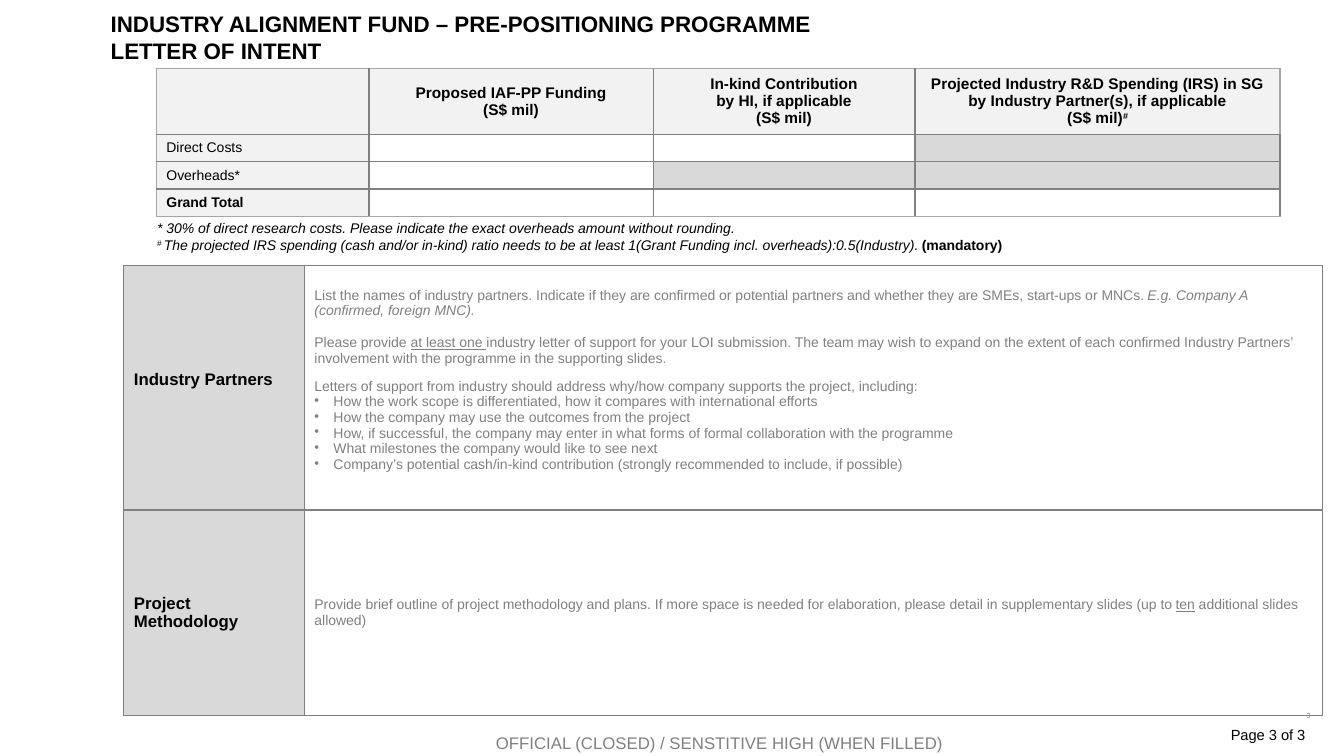
import pptx
import pptx.dml.color
import pptx.enum.text
import pptx.oxml
import pptx.oxml.ns
import pptx.util
from lxml import etree

Cm = pptx.util.Cm
Pt = pptx.util.Pt
RGBColor = pptx.dml.color.RGBColor
ALIGN = pptx.enum.text.PP_ALIGN
MIDDLE = pptx.enum.text.MSO_ANCHOR.MIDDLE
qn = pptx.oxml.ns.qn

BLACK = RGBColor(0x00, 0x00, 0x00)
GUIDE_GREY = RGBColor(0x80, 0x80, 0x80)
EDGE_GREY = RGBColor(0xA6, 0xA6, 0xA6)
NUMBER_GREY = RGBColor(0x8C, 0x8C, 0x8C)
LABEL_FILL = RGBColor(0xD9, 0xD9, 0xD9)
HEADER_FILL = RGBColor(0xF2, 0xF2, 0xF2)

FUNDING_HEADERS = [
    [],
    [["Proposed IAF-PP Funding"], ["(S$ mil)"]],
    [["In-kind Contribution"], ["by HI, if applicable"], ["(S$ mil)"]],
    [["Projected Industry R&D Spending (IRS) in SG by Industry Partner(s), if applicable"],
     ["(S$ mil)", ("#", "^")]],
]
COST_ROWS = ["Direct Costs", "Overheads*", "Grand Total"]
BLOCKED_CELLS = {(1, 3), (2, 2), (2, 3)}

PARTNER_GUIDANCE = [
    ["List the names of industry partners. Indicate if they are confirmed or potential partners "
     "and whether they are SMEs, start-ups or MNCs. ",
     ("E.g. Company A (confirmed, foreign MNC).", "i")],
    ["Please provide ", ("at least one ", "u"),
     "industry letter of support for your LOI submission. The team may wish to expand on the "
     "extent of each confirmed Industry Partners’ involvement with the programme in the "
     "supporting slides."],
    ["Letters of support from industry should address why/how company supports the project, "
     "including:"],
]
LETTER_POINTS = [
    ["How the work scope is differentiated, how it compares with international efforts"],
    ["How the company may use the outcomes from the project"],
    ["How, if successful, the company may enter in what forms of formal collaboration "
     "with the programme"],
    ["What milestones the company would like to see next"],
    ["Company’s potential cash/in-kind contribution (strongly recommended to include, if possible)"],
]
METHODOLOGY_GUIDANCE = [
    ["Provide brief outline of project methodology and plans. If more space is needed for "
     "elaboration, please detail in supplementary slides (up to ", ("ten", "u"),
     " additional slides allowed)"],
]
FOOTNOTES = [
    [("* 30% of direct research costs. Please indicate the exact overheads amount "
      "without rounding.", "i")],
    [("# ", "i^"),
     ("The projected IRS spending (cash and/or in-kind) ratio needs to be at least "
      "1(Grant Funding incl. overheads):0.5(Industry). ", "i"),
     ("(mandatory)", "b")],
]


def add_bullet(paragraph):
    properties = paragraph._p.get_or_add_pPr()
    properties.set("marL", str(Cm(0.48)))
    properties.set("indent", str(-Cm(0.48)))
    etree.SubElement(properties, qn("a:buChar")).set("char", "•")


def write(frame, paragraphs, size, color=BLACK, style="", align=ALIGN.LEFT, gaps=(), bullets_from=99):
    for index, parts in enumerate(paragraphs):
        paragraph = frame.paragraphs[0] if index == 0 else frame.add_paragraph()
        paragraph.alignment = align
        if index < len(gaps) and gaps[index]:
            paragraph.space_before = Pt(gaps[index])
        if index >= bullets_from:
            add_bullet(paragraph)
        for part in parts:
            text, marks = (part, "") if isinstance(part, str) else part
            if text == "\n":
                paragraph.add_line_break()
                continue
            marks += style
            run = paragraph.add_run()
            run.text = text
            font = run.font
            font.name, font.size = "Arial", Pt(size)
            font.color.rgb = color
            font.bold, font.italic, font.underline = "b" in marks, "i" in marks, "u" in marks
            if "^" in marks:
                run._r.get_or_add_rPr().set("baseline", "30000")


def add_text(slide, left, top, width, height, paragraphs, size, **looks):
    box = slide.shapes.add_textbox(Cm(left), Cm(top), Cm(width), Cm(height))
    box.text_frame.word_wrap = True
    write(box.text_frame, paragraphs, size, **looks)
    return box.text_frame


def add_grid(slide, left, top, widths, heights):
    frame = slide.shapes.add_table(len(heights), len(widths), Cm(left), Cm(top),
                                   Cm(sum(widths)), Cm(sum(heights)))
    table = frame.table
    table.first_row = table.horz_banding = False
    for column, width in zip(table.columns, widths):
        column.width = Cm(width)
    for row, height in zip(table.rows, heights):
        row.height = Cm(height)
    return table


def format_cell(cell, fill=None, edges=""):
    cell.vertical_anchor = MIDDLE
    properties = cell._tc.get_or_add_tcPr()
    for side in "LRTB":
        line = etree.SubElement(properties, qn(f"a:ln{side}"), w=str(Pt(1)))
        solid = etree.SubElement(line, qn("a:solidFill"))
        color = EDGE_GREY if side in edges else GUIDE_GREY
        etree.SubElement(solid, qn("a:srgbClr"), val=str(color))
    if fill is None:
        cell.fill.background()
    else:
        cell.fill.solid()
        cell.fill.fore_color.rgb = fill


def add_funding_table(slide):
    table = add_grid(slide, 3.94, 1.73, [5.36, 7.16, 6.6, 9.2], [1.65, 0.69, 0.69, 0.69])
    for row in range(4):
        for column in range(4):
            cell = table.cell(row, column)
            edges = ("L" if column == 0 else "") + {0: "T", 3: "B"}.get(row, "")
            if (row, column) == (0, 3):
                edges += "R"
            fill = HEADER_FILL if row == 0 or column == 0 else None
            if (row, column) in BLOCKED_CELLS:
                fill = LABEL_FILL
            format_cell(cell, fill, edges)
            if row == 0:
                write(cell.text_frame, FUNDING_HEADERS[column], 11, style="b", align=ALIGN.CENTER)
            elif column == 0:
                write(cell.text_frame, [[COST_ROWS[row - 1]]], 10, style="b" if row == 3 else "")
            else:
                cell.text_frame.paragraphs[0].font.size = Pt(10)


def add_details_table(slide):
    table = add_grid(slide, 3.12, 6.7, [4.55, 25.65], [6.15, 5.18])
    sections = [
        ("Industry Partners", PARTNER_GUIDANCE + LETTER_POINTS, 0.53),
        ("Project Methodology", METHODOLOGY_GUIDANCE, 0.13),
    ]
    for row, (title, guidance, bottom) in enumerate(sections):
        label, answer = table.cell(row, 0), table.cell(row, 1)
        format_cell(label, LABEL_FILL)
        format_cell(answer)
        label.margin_bottom = answer.margin_bottom = Cm(bottom)
        write(label.text_frame, [[title]], 12, style="b")
        write(answer.text_frame, guidance, 10, color=GUIDE_GREY, gaps=(0, 11.5, 9),
              bullets_from=len(PARTNER_GUIDANCE))


def main():
    deck = pptx.Presentation()
    deck.slide_width, deck.slide_height = Cm(33.87), Cm(19.05)
    slide = deck.slides.add_slide(deck.slide_layouts[6])
    number = add_text(slide, 25.3, 17.53, 7.9, 1.02, [["3"]], 5.2,
                      color=NUMBER_GREY, align=ALIGN.RIGHT)
    number.vertical_anchor = MIDDLE
    number.margin_left = number.margin_right = Cm(0.18)
    add_details_table(slide)
    add_text(slide, 2.54, 0.13, 24.41, 1.52,
             [["INDUSTRY ALIGNMENT FUND – PRE-POSITIONING PROGRAMME", "\n", "LETTER OF INTENT"]],
             16, style="b")
    add_text(slide, 29.34, 18.16, 3.81, 0.74, [["Page 3 of 3"]], 10.5, align=ALIGN.RIGHT)
    add_funding_table(slide)
    add_text(slide, 3.71, 5.41, 25.83, 1.12, FOOTNOTES, 10)
    add_text(slide, 6.73, 18.34, 22.81, 0.76,
             [["OFFICIAL (CLOSED) / SENSTITIVE HIGH (WHEN FILLED)"]], 12,
             color=GUIDE_GREY, align=ALIGN.CENTER)
    deck.save("out.pptx")


if __name__ == "__main__":
    main()
